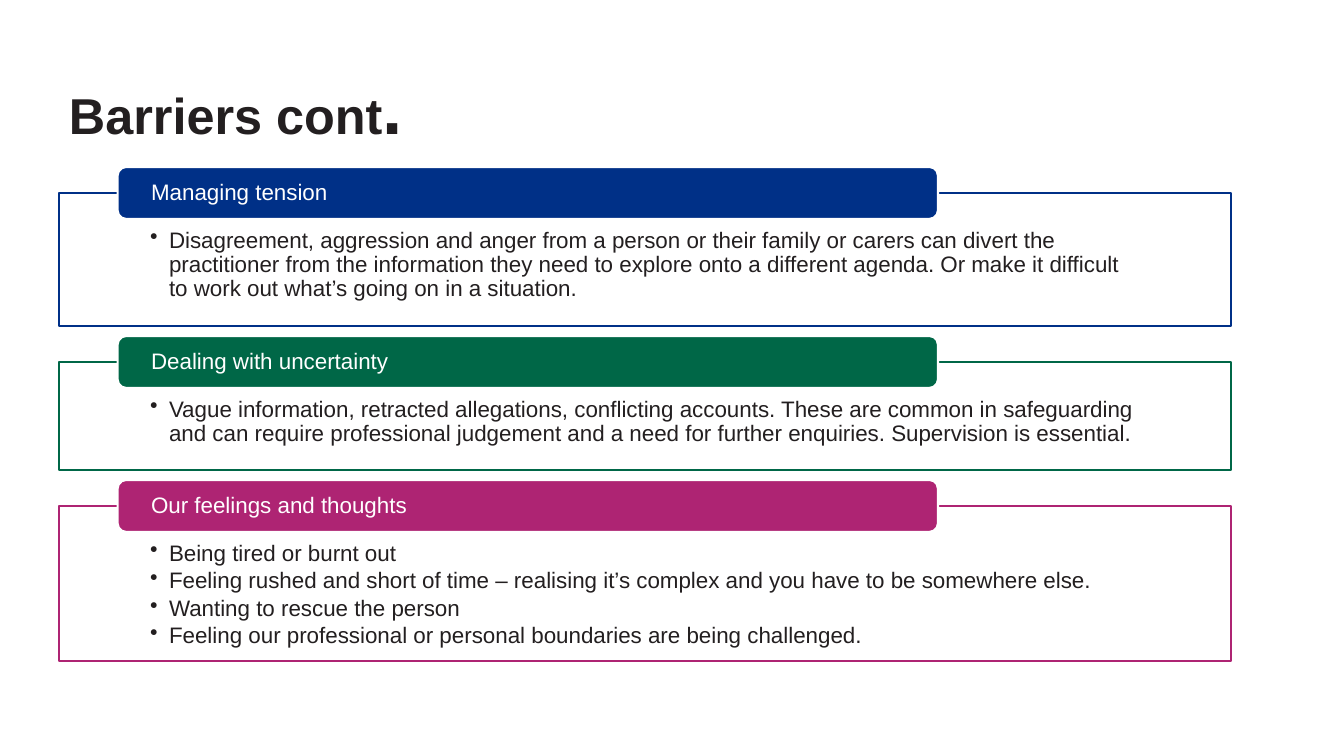
from dataclasses import dataclass

from lxml import etree
from pptx import Presentation
from pptx.dml.color import RGBColor
from pptx.enum.shapes import MSO_SHAPE
from pptx.enum.text import MSO_ANCHOR, PP_ALIGN
from pptx.oxml.ns import qn
from pptx.util import Emu, Pt

RECTANGLE, ROUNDED = MSO_SHAPE.RECTANGLE, MSO_SHAPE.ROUNDED_RECTANGLE
TOP, MIDDLE = MSO_ANCHOR.TOP, MSO_ANCHOR.MIDDLE
LEFT = PP_ALIGN.LEFT
EMU_PER_PX = 914400 / 100.8


@dataclass(frozen=True)
class Theme:
    font: str = "Arial"
    ink: str = "231F20"
    white: str = "FFFFFF"
    blue: str = "003087"
    green: str = "006747"
    magenta: str = "AE2473"
    title_size: int = 36
    full_stop_size: int = 52
    text_size: int = 16
    outline: float = 1.5
    panel_opacity: int = 90


THEME = Theme()

# Heading, colour, panel height in px, bullet points
BARRIERS = [
    ("Managing tension", THEME.blue, 133, [
        "Disagreement, aggression and anger from a person or their family or carers "
        "can divert the practitioner from the information they need to explore onto a "
        "different agenda. Or make it difficult to work out what’s going on in a situation.",
    ]),
    ("Dealing with uncertainty", THEME.green, 108, [
        "Vague information, retracted allegations, conflicting accounts. These are common "
        "in safeguarding and can require professional judgement and a need for further "
        "enquiries. Supervision is essential.",
    ]),
    ("Our feelings and thoughts", THEME.magenta, 155, [
        "Being tired or burnt out",
        "Feeling rushed and short of time – realising it’s complex and you have to be "
        "somewhere else.",
        "Wanting to rescue the person",
        "Feeling our professional or personal boundaries are being challenged.",
    ]),
]
PANEL_GAP = 36


def px(length):
    return Emu(round(length * EMU_PER_PX))


def add_bullet(paragraph, indent):
    properties = paragraph._p.get_or_add_pPr()
    properties.set("marL", str(px(indent)))
    properties.set("indent", str(-px(indent)))
    etree.SubElement(properties, qn("a:buChar")).set("char", "•")


def write_text(frame, paragraphs, color, anchor=TOP, insets=(10, 5, 10, 5),
               bold=False, bullet_indent=0, space_after=0):
    """Fill a frame; each paragraph is a list of (text, size) runs."""
    frame.word_wrap = True
    frame.vertical_anchor = anchor
    (frame.margin_left, frame.margin_top,
     frame.margin_right, frame.margin_bottom) = map(px, insets)
    for index, runs in enumerate(paragraphs):
        paragraph = frame.add_paragraph() if index else frame.paragraphs[0]
        if bullet_indent:
            add_bullet(paragraph, bullet_indent)
        paragraph.alignment = LEFT
        paragraph.line_spacing = 0.9
        paragraph.space_after = Pt(space_after)
        for text, size in runs:
            run = paragraph.add_run()
            run.text = text
            run.font.name = THEME.font
            run.font.size = Pt(size)
            run.font.bold = bold
            run.font.color.rgb = RGBColor.from_string(color)


def add_box(slide, kind, box, fill, line):
    shape = slide.shapes.add_shape(kind, *map(px, box))
    shape.shadow.inherit = False
    shape.fill.solid()
    shape.fill.fore_color.rgb = RGBColor.from_string(fill)
    shape.line.color.rgb = RGBColor.from_string(line)
    shape.line.width = Pt(THEME.outline)
    return shape


def set_opacity(shape, percent):
    color = shape._element.spPr.find(qn("a:solidFill"))[0]
    etree.SubElement(color, qn("a:alpha")).set("val", str(percent * 1000))


def add_title(slide, box):
    title = slide.shapes.add_textbox(*map(px, box))
    runs = [("Barriers cont", THEME.title_size), (".", THEME.full_stop_size)]
    write_text(title.text_frame, [runs], THEME.ink, anchor=MIDDLE, bold=True)


def add_barrier(slide, box, heading, color, points):
    """Draw an outlined panel of points with a heading tab across its top edge."""
    left, top, width, _ = box
    panel = add_box(slide, RECTANGLE, box, THEME.white, color)
    set_opacity(panel, THEME.panel_opacity)
    write_text(panel.text_frame, [[(point, THEME.text_size)] for point in points],
               THEME.ink, insets=(91, 36, 91, 12), bullet_indent=19, space_after=2.4)

    tab_height = 52
    tab_box = (left + width * 0.05, top - tab_height / 2, width * 0.7, tab_height)
    tab = add_box(slide, ROUNDED, tab_box, color, THEME.white)
    write_text(tab.text_frame, [[(heading, THEME.text_size)]], THEME.white,
               anchor=MIDDLE, insets=(31, 0, 31, 0))


def add_barrier_list(slide, left, top, width):
    for heading, color, height, points in BARRIERS:
        add_barrier(slide, (left, top, width, height), heading, color, points)
        top += height + PANEL_GAP


def main():
    presentation = Presentation()
    presentation.slide_width, presentation.slide_height = px(1344), px(756)
    slide = presentation.slides.add_slide(presentation.slide_layouts[6])
    add_title(slide, (59, 52, 1190, 118))
    add_barrier_list(slide, 59, 193, 1172)
    presentation.save("out.pptx")


if __name__ == "__main__":
    main()
